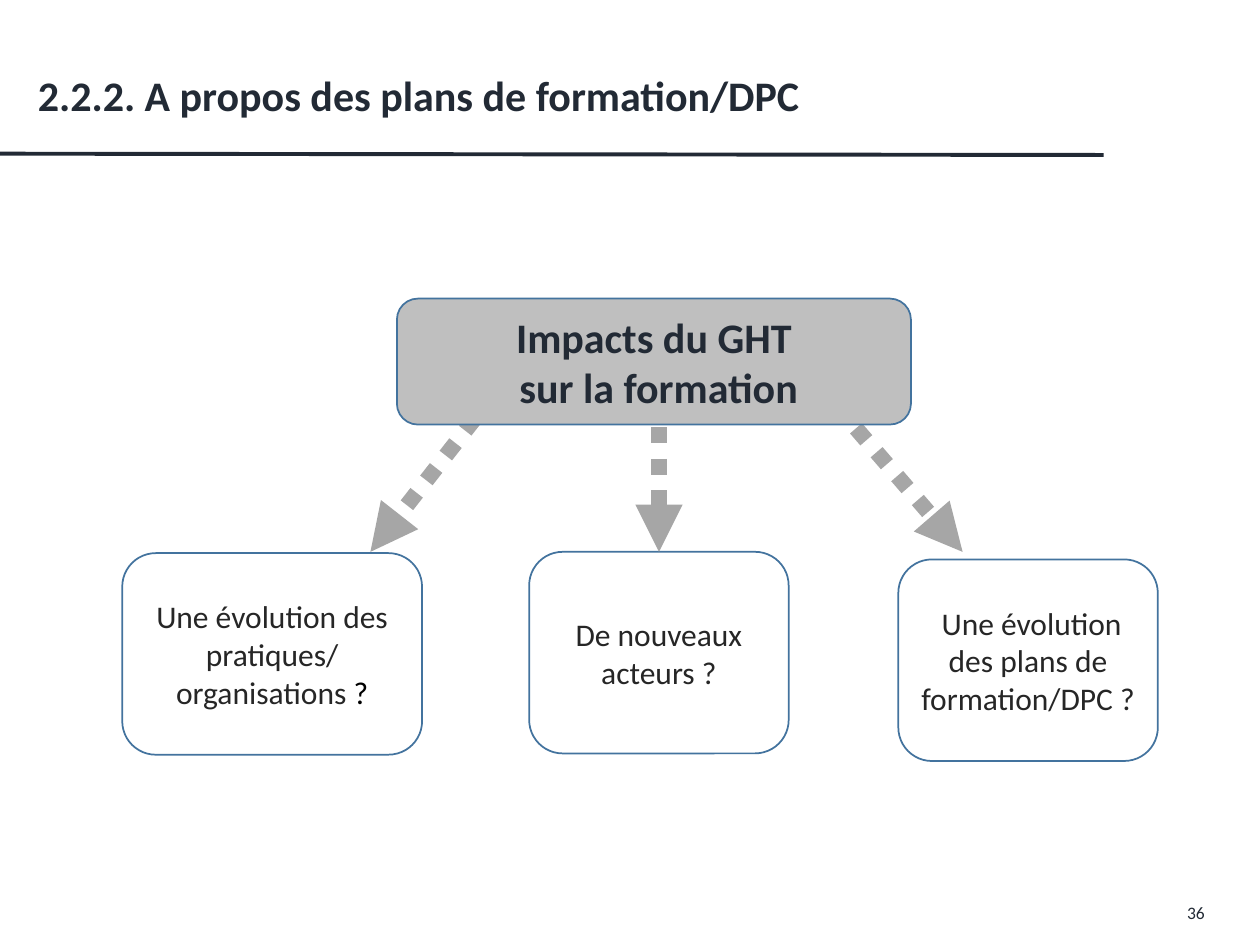
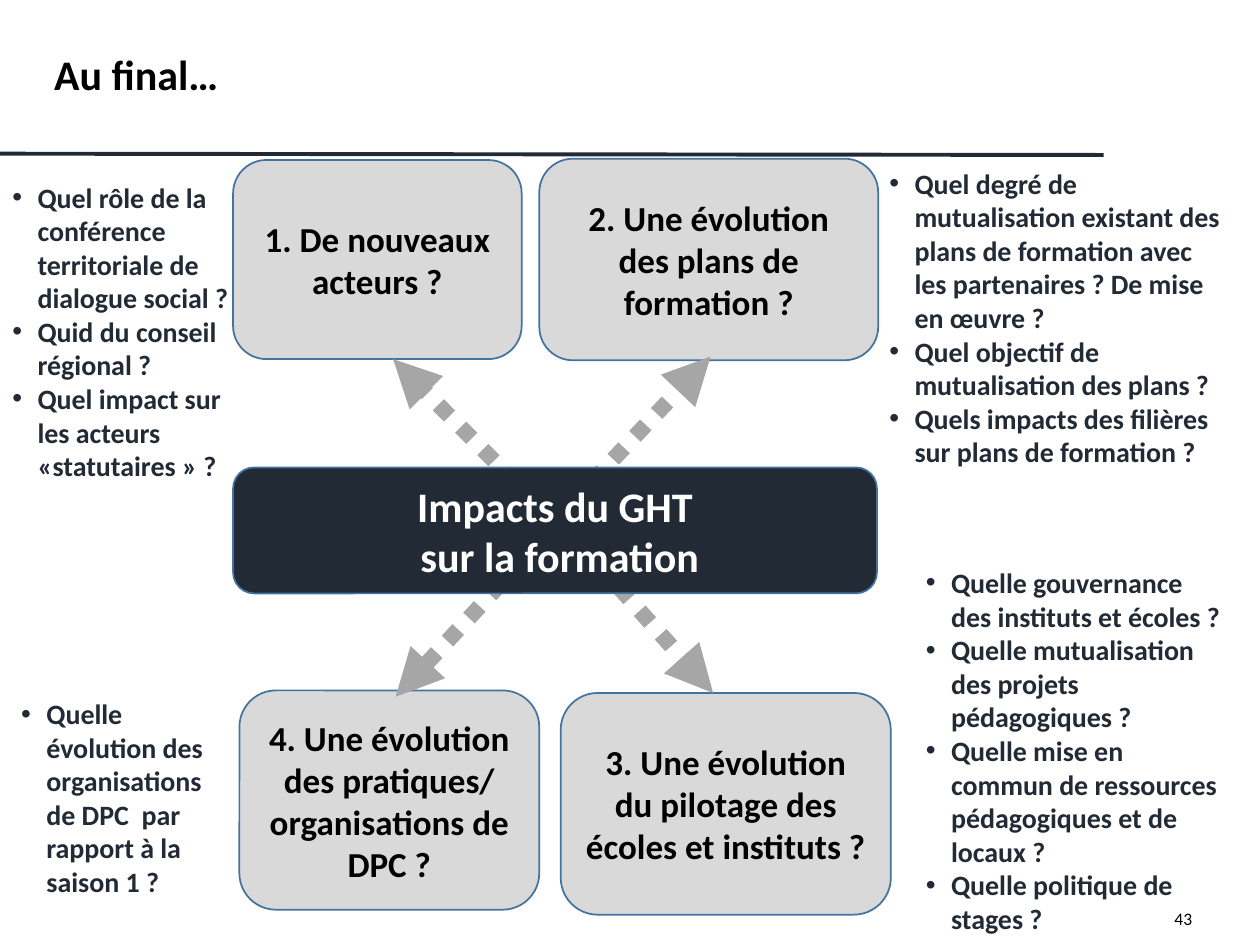
import pptx
import pptx.util
import pptx.dml.color
import pptx.enum.dml
import pptx.enum.shapes
import pptx.enum.text
import pptx.oxml
import pptx.oxml.ns

COLS, ROWS = 100, 75
WIDTH, HEIGHT = pptx.util.Inches(10), pptx.util.Inches(7.5)
FONT = "Calibri"
COLORS = {
    "navy": "222A35",
    "black": "000000",
    "white": "FFFFFF",
    "ink": "262626",
    "outline": "43739E",
    "arrow": "A6A6A6",
    "hub": "BFBFBF",
    "topic": "D9D9D9",
}
ALIGN = pptx.enum.text.PP_ALIGN
ANCHOR = pptx.enum.text.MSO_ANCHOR
FIT = pptx.enum.text.MSO_AUTO_SIZE


def rgb(name):
    return pptx.dml.color.RGBColor.from_string(COLORS[name])


def col(n):
    return int(WIDTH * n / COLS)


def row(n):
    return int(HEIGHT * n / ROWS)


def place(left, top, width, height):
    return col(left), row(top), col(width), row(height)


def add_child(parent, tag, **attrs):
    child = pptx.oxml.parse_xml(f"<a:{tag} {pptx.oxml.ns.nsdecls('a')}/>")
    for name, value in attrs.items():
        child.set(name, value)
    parent.append(child)


def write(sp, paragraphs, size, color="navy", bold=False, align=ALIGN.LEFT,
          anchor=ANCHOR.TOP, fit=FIT.NONE, bullet=False):
    tf = sp.text_frame
    tf.word_wrap = True
    tf.auto_size = fit
    tf.vertical_anchor = anchor
    for i, runs in enumerate(paragraphs):
        p = tf.add_paragraph() if i else tf.paragraphs[0]
        p.alignment = align
        if bullet:
            pPr = p._p.get_or_add_pPr()
            indent = col(2)
            pPr.set("marL", str(indent))
            pPr.set("indent", str(-indent))
            add_child(pPr, "buFont", typeface="Arial")
            add_child(pPr, "buChar", char="•")
        if isinstance(runs, str):
            runs = [(runs, color)]
        for text, run_color in runs:
            r = p.add_run()
            r.text = text
            r.font.name = FONT
            r.font.size = pptx.util.Pt(size)
            r.font.bold = bold
            r.font.color.rgb = rgb(run_color)


def add_line(slide, start, end, color, width):
    line = slide.shapes.add_connector(
        pptx.enum.shapes.MSO_CONNECTOR.STRAIGHT,
        col(start[0]), row(start[1]), col(end[0]), row(end[1]))
    line.line.color.rgb = rgb(color)
    line.line.width = pptx.util.Pt(width)
    add_child(line._element.spPr, "effectLst")
    return line


def add_arrow(slide, start, end):
    line = add_line(slide, start, end, "arrow", 9)
    line.line.dash_style = pptx.enum.dml.MSO_LINE.ROUND_DOT
    ln = line._element.spPr.find(pptx.oxml.ns.qn("a:ln"))
    add_child(ln, "tailEnd", type="triangle")


def add_box(slide, box, paragraphs, fill, **text_format):
    sp = slide.shapes.add_shape(
        pptx.enum.shapes.MSO_SHAPE.ROUNDED_RECTANGLE, *place(*box))
    sp.shadow.inherit = False
    sp.fill.solid()
    sp.fill.fore_color.rgb = rgb(fill)
    sp.line.color.rgb = rgb("outline")
    sp.line.width = pptx.util.Pt(1)
    write(sp, paragraphs, align=ALIGN.CENTER, anchor=ANCHOR.MIDDLE, **text_format)


def add_hub(slide, box, fill, color):
    add_box(slide, box, ["Impacts du GHT", " sur la formation"], fill,
            size=24, color=color, bold=True)


def add_text(slide, box, paragraphs, **text_format):
    sp = slide.shapes.add_textbox(*place(*box))
    write(sp, paragraphs, **text_format)


def add_questions(slide, box, questions):
    add_text(slide, box, questions, size=16, bold=True, bullet=True,
             fit=FIT.SHAPE_TO_FIT_TEXT)


def add_page_number(slide, box, number, **text_format):
    add_text(slide, box, [number], size=10, align=ALIGN.RIGHT, **text_format)


def add_titled_slide(prs, title, box, color):
    slide = prs.slides.add_slide(prs.slide_layouts.get_by_name("Title Only"))
    add_line(slide, (0, 12.2), (87.6, 12.3), "navy", 2.25)
    sp = slide.shapes.title
    sp.left, sp.top, sp.width, sp.height = place(*box)
    write(sp, [title], 24, color, bold=True, anchor=ANCHOR.MIDDLE)
    return slide


def build_training_plans(prs):
    slide = add_titled_slide(prs, "2.2.2. A propos des plans de formation/DPC",
                             (2, 3.1, 84.3, 8.8), "navy")
    topics = [
        ((9.7, 43.9, 23.8, 16), ["Une évolution des pratiques/",
                                 [("organisations ", "ink"), ("?", "black")]]),
        ((42, 43.8, 20.6, 16), ["De nouveaux acteurs ?"]),
        ((71.3, 44.4, 20.6, 16), [" Une évolution des plans de formation/DPC ?"]),
    ]
    for box, paragraphs in topics:
        add_box(slide, box, paragraphs, "white", size=18, color="ink")
    for start, end_col in [((37.7, 33.2), 29.4), ((52.3, 28.9), 52.3),
                           ((66.3, 32.1), 76.4)]:
        add_arrow(slide, start, (end_col, 43.8))
    add_hub(slide, (31.5, 23.7, 40.8, 10), "hub", "navy")
    add_page_number(slide, (74.1, 70.4, 22.5, 4), "36", anchor=ANCHOR.MIDDLE)


def build_conclusion(prs):
    slide = add_titled_slide(prs, "Au final…", (3.3, 1.7, 76.2, 8.3), "black")
    topics = [
        ((18.5, 12.7, 22.9, 15.8), ["1. De nouveaux acteurs ?"]),
        ((42.8, 12.6, 26.9, 16), ["2. Une évolution des plans de formation ?"]),
        ((44.5, 55, 26.2, 17.6),
         ["3. Une évolution du pilotage des écoles et instituts ?"]),
        ((19, 54.8, 23.8, 17.4),
         ["4. Une évolution des pratiques/", "organisations de DPC ?"]),
    ]
    for box, paragraphs in topics:
        add_box(slide, box, paragraphs, "topic", size=20, color="black", bold=True)
    for start, end in [((44.5, 41.9), (31.2, 28.5)), ((43.5, 41.9), (56.4, 28.3)),
                       ((44.1, 41), (56.6, 55)), ((44.9, 40.8), (31.4, 55.3))]:
        add_arrow(slide, start, end)
    add_questions(slide, (0, 13.8, 19.6, 25.2), [
        "Quel rôle de la conférence territoriale de dialogue social ?",
        "Quid du conseil régional ?",
        "Quel impact sur les acteurs «statutaires » ?",
    ])
    add_questions(slide, (69.6, 12.7, 28.8, 25.2), [
        "Quel degré de mutualisation existant des plans de formation avec "
        "les partenaires ? De mise en œuvre ?",
        "Quel objectif de mutualisation des plans ?",
        "Quels impacts des filières sur plans de formation ?",
    ])
    add_questions(slide, (72.5, 44.4, 25.9, 30.6), [
        "Quelle gouvernance des instituts et écoles ?",
        "Quelle mutualisation des projets pédagogiques ?",
        "Quelle mise en commun de ressources pédagogiques et de locaux ?",
        "Quelle politique de stages ?",
    ])
    add_questions(slide, (0.7, 54.8, 17.9, 17.2), [
        "Quelle évolution des organisations de DPC  par rapport à la saison 1 ?",
    ])
    add_hub(slide, (18.5, 37.1, 51.1, 10), "navy", "white")
    add_page_number(slide, (73.1, 71.6, 22.5, 3.4), "43", color="black")


def main():
    prs = pptx.Presentation()
    prs.slide_width, prs.slide_height = WIDTH, HEIGHT
    build_training_plans(prs)
    build_conclusion(prs)
    prs.save("out.pptx")


if __name__ == "__main__":
    main()
